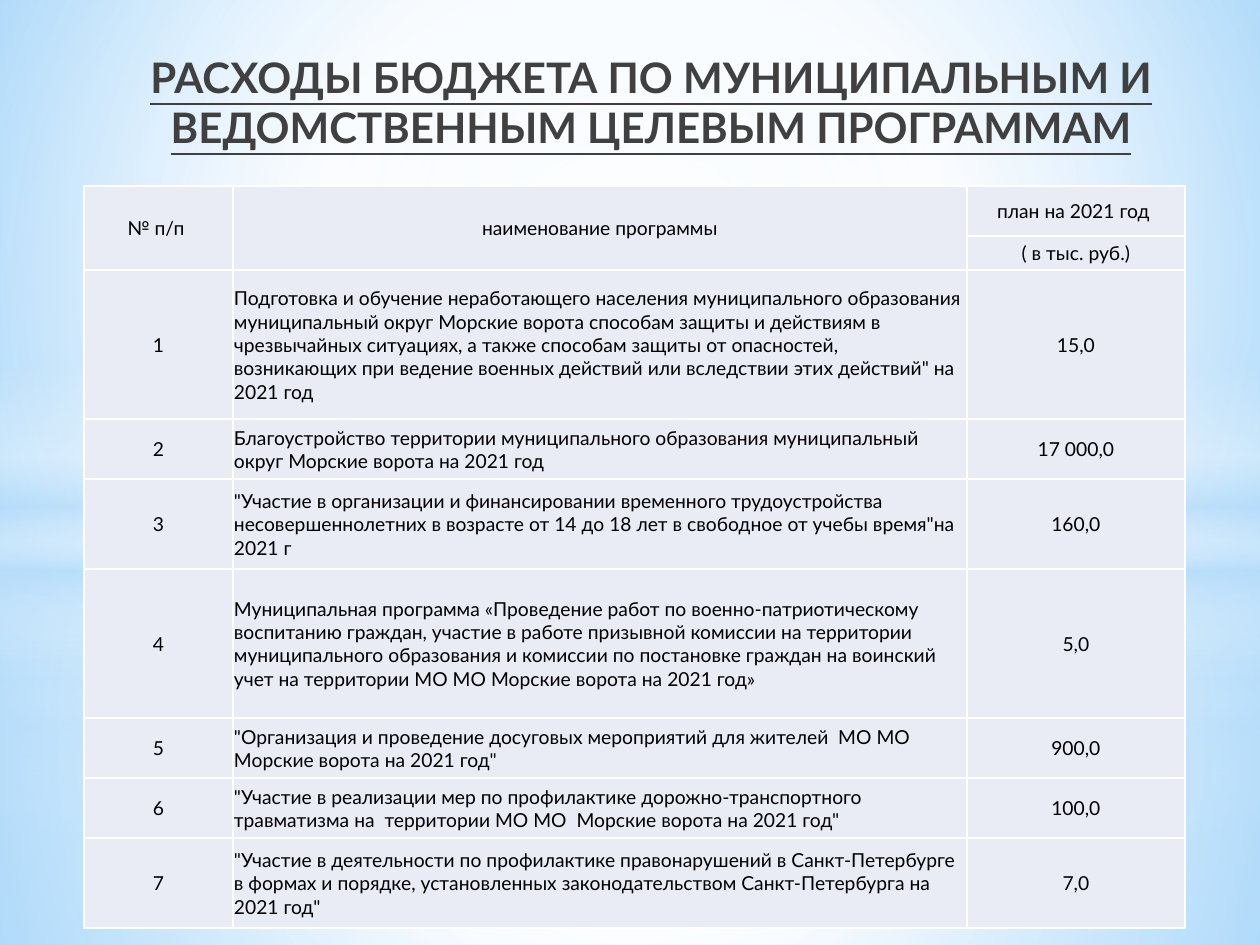
from lxml import etree
from pptx import Presentation
from pptx.dml.color import RGBColor
from pptx.enum.shapes import MSO_SHAPE
from pptx.enum.text import MSO_ANCHOR, PP_ALIGN
from pptx.oxml.ns import qn
from pptx.util import Pt

RECT, OVAL = MSO_SHAPE.RECTANGLE, MSO_SHAPE.OVAL
MIDDLE, BOTTOM = MSO_ANCHOR.MIDDLE, MSO_ANCHOR.BOTTOM
LEFT, CENTER = PP_ALIGN.LEFT, PP_ALIGN.CENTER

FONT = "Lato"
WHITE, SKY, CELL = "FFFFFF", "B4DCFA", "E9EBF5"
MID = (50, 50, 50, 50)

TITLE = "РАСХОДЫ БЮДЖЕТА ПО МУНИЦИПАЛЬНЫМ И ВЕДОМСТВЕННЫМ ЦЕЛЕВЫМ ПРОГРАММАМ"
HEADER = [
    ("№ п/п ", "наименование программы", "план на 2021 год "),
    ("", "", "( в тыс. руб.)"),
]
PROGRAMS = [
    ("Подготовка и обучение неработающего населения муниципального образования "
     "муниципальный округ Морские ворота способам защиты и действиям в чрезвычайных "
     "ситуациях, а также способам защиты от опасностей, возникающих при ведение "
     "военных действий или вследствии этих действий\" на 2021 год", "15,0"),
    ("Благоустройство территории муниципального образования муниципальный округ "
     "Морские ворота на 2021 год", "17 000,0"),
    ("\"Участие в организации и финансировании временного трудоустройства "
     "несовершеннолетних в возрасте от 14 до 18 лет в свободное от учебы "
     "время\"на 2021 г", "160,0"),
    ("Муниципальная программа «Проведение работ по военно-патриотическому воспитанию "
     "граждан, участие в работе призывной комиссии на территории муниципального "
     "образования и комиссии по постановке граждан на воинский учет на территории "
     "МО МО Морские ворота на 2021 год»", "5,0"),
    ("\"Организация и проведение досуговых мероприятий для жителей  МО МО Морские "
     "ворота на 2021 год\"", "900,0"),
    ("\"Участие в реализации мер по профилактике дорожно-транспортного травматизма "
     "на  территории МО МО  Морские ворота на 2021 год\"", "100,0"),
    ("\"Участие в деятельности по профилактике правонарушений в Санкт-Петербурге "
     "в формах и порядке, установленных законодательством Санкт-Петербурга "
     "на 2021 год\"", "7,0"),
]
COLS = [149, 734, 218]
ROWS = [50, 34, 149, 60, 90, 149, 60, 60, 90]

BACKDROP = [(0, "9ED5FF", 100), (60, WHITE, 100), (100, "5BB9FF", 100)]
BAND = [(0, WHITE, 0), (29, WHITE, 30), (45, SKY, 40),
        (55, WHITE, 26), (65, SKY, 60), (100, WHITE, 0)]


def layers(split, band_top, extra, glow_end):
    lower = [(0, WHITE, 91 + extra), (37, WHITE, 76 + extra), (100, SKY, 79 + extra)]
    upper = [(0, WHITE, 89 + extra), (48, WHITE, 62 + extra), (100, SKY, 79 + extra)]
    glow = [(0, WHITE, 100), (glow_end, WHITE, 0)]
    return [
        (RECT, split, 945 - split, lower, MID),
        (RECT, 0, split, upper, MID),
        (RECT, band_top, 315, BAND, None),
        (OVAL, 220, 703, glow, MID),
    ]


def px(n):
    return round(n * 914400 / 126)


def rgb(value):
    return RGBColor.from_string(value)


def set_gradient(root, stops, focus):
    solid = root.find(".//" + qn("a:solidFill"))
    grad = etree.Element(qn("a:gradFill"), rotWithShape="1")
    gs_list = etree.SubElement(grad, qn("a:gsLst"))
    for pos, value, alpha in stops:
        gs = etree.SubElement(gs_list, qn("a:gs"), pos=str(pos * 1000))
        clr = etree.SubElement(gs, qn("a:srgbClr"), val=value)
        if alpha < 100:
            etree.SubElement(clr, qn("a:alpha"), val=str(alpha * 1000))
    if focus:
        way = etree.SubElement(grad, qn("a:path"))
        way.set("path", "circle")
        sides = {k: str(v * 1000) for k, v in zip("ltrb", focus)}
        etree.SubElement(way, qn("a:fillToRect"), sides)
    else:
        etree.SubElement(grad, qn("a:lin"), ang="5400000", scaled="0")
    solid.getparent().replace(solid, grad)


def style_text(p, size, color, align):
    p.alignment = align
    for r in p.runs:
        r.font.name = FONT
        r.font.size = Pt(size)
        r.font.color.rgb = rgb(color)


def set_borders(cell):
    tc_pr = cell._tc.get_or_add_tcPr()
    for i, side in enumerate(("lnL", "lnR", "lnT", "lnB")):
        ln = etree.Element(qn("a:" + side), w=str(Pt(1)))
        fill = etree.SubElement(ln, qn("a:solidFill"))
        etree.SubElement(fill, qn("a:srgbClr"), val=WHITE)
        tc_pr.insert(i, ln)


def add_background(s):
    s.background.fill.solid()
    s.background.fill.fore_color.rgb = rgb(WHITE)
    set_gradient(s.element, BACKDROP, (20, 10, 20, 60))
    for kind, top, height, stops, focus in layers(703, 519, 0, 56) + layers(533, 365, 1, 54):
        sp = s.shapes.add_shape(kind, 0, px(top), px(1260), px(height))
        sp.shadow.inherit = False
        sp.line.fill.background()
        sp.fill.solid()
        sp.fill.fore_color.rgb = rgb(WHITE)
        set_gradient(sp.element, stops, focus)


def add_title(s):
    tf = s.shapes.add_textbox(px(43), px(125), px(1216), px(128)).text_frame
    tf.word_wrap = True
    tf.vertical_anchor = BOTTOM
    tf.margin_bottom = px(101)
    p = tf.paragraphs[0]
    p.text = TITLE
    style_text(p, 24, "404040", CENTER)
    p.runs[0].font.bold = True
    p.runs[0].font.underline = True


def add_programs(s):
    rows = HEADER + [(str(n), *program) for n, program in enumerate(PROGRAMS, 1)]
    table = s.shapes.add_table(len(ROWS), len(COLS), px(84), px(186),
                               px(sum(COLS)), px(sum(ROWS))).table
    for column, width in zip(table.columns, COLS):
        column.width = px(width)
    for row, height in zip(table.rows, ROWS):
        row.height = px(height)
    for i, row in enumerate(rows):
        is_header = i < len(HEADER)
        for j, text in enumerate(row):
            cell = table.cell(i, j)
            cell.fill.solid()
            cell.fill.fore_color.rgb = rgb(CELL)
            cell.vertical_anchor = MIDDLE
            inset = 0 if is_header else px(1)
            cell.margin_left = cell.margin_right = cell.margin_top = inset
            cell.margin_bottom = 0
            p = cell.text_frame.paragraphs[0]
            p.text = text
            style_text(p, 11, "000000", LEFT if j == 1 and not is_header else CENTER)
            p.font.size = Pt(11)
            set_borders(cell)
    for j in (0, 1):
        table.cell(0, j).merge(table.cell(1, j))


def main():
    prs = Presentation()
    prs.slide_width, prs.slide_height = px(1260), px(945)
    s = prs.slides.add_slide(prs.slide_layouts[6])
    add_background(s)
    add_title(s)
    add_programs(s)
    prs.save("out.pptx")


if __name__ == "__main__":
    main()
